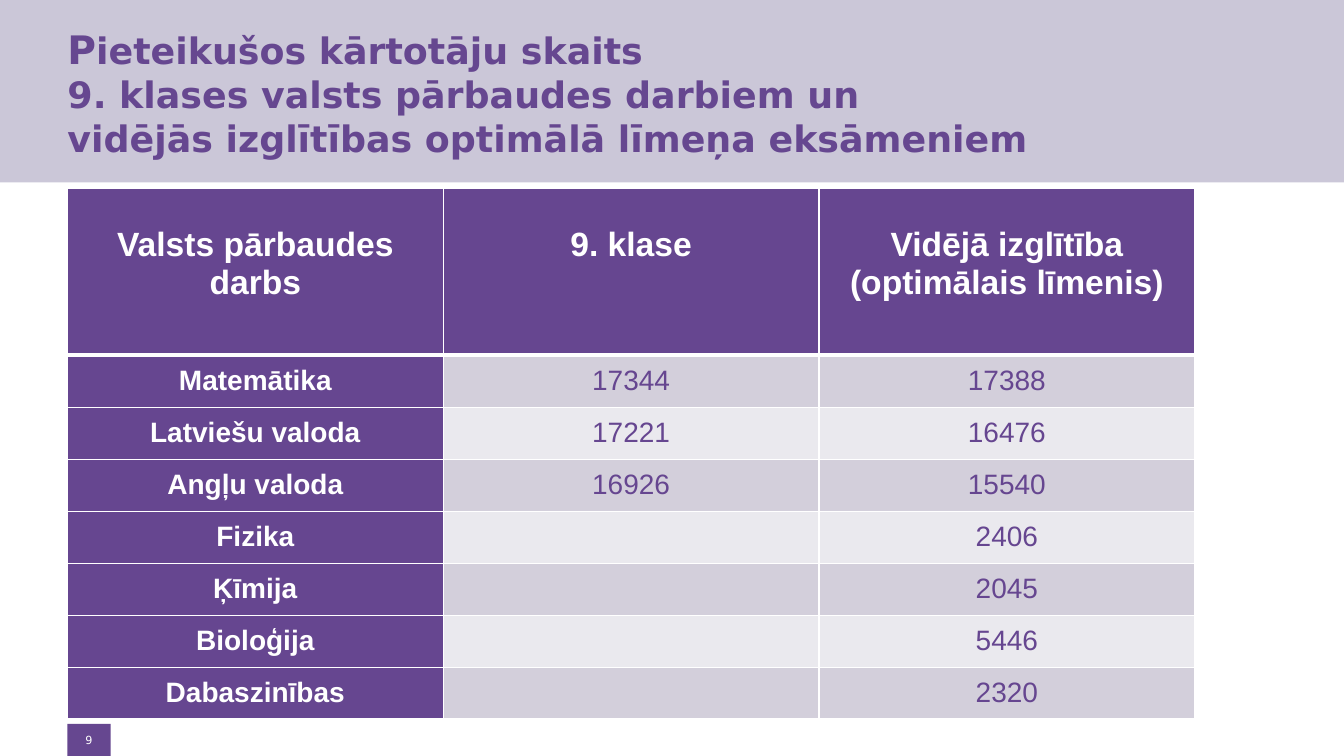
from dataclasses import dataclass

from lxml import etree
from pptx import Presentation
from pptx.dml.color import RGBColor
from pptx.enum.shapes import MSO_SHAPE
from pptx.enum.text import MSO_ANCHOR, MSO_AUTO_SIZE, PP_ALIGN
from pptx.oxml.ns import qn
from pptx.util import Cm, Pt

RECT = MSO_SHAPE.RECTANGLE
LEFT, CENTER = PP_ALIGN.LEFT, PP_ALIGN.CENTER
TOP, MIDDLE = MSO_ANCHOR.TOP, MSO_ANCHOR.MIDDLE
NO_AUTOFIT = MSO_AUTO_SIZE.NONE

PURPLE, TABLE_PURPLE, LILAC, WHITE = "664790", "664690", "CBC7D8", "FFFFFF"
BANDS = ("D3CFDB", "EAE9EE")
TITLE_FONT, TABLE_FONT = "DejaVu Sans", "Arial"
MARGIN = 1.7
COL_WIDTH, HEADER_HEIGHT, ROW_HEIGHT = 9.47, 4.19, 1.31

TITLE_LINES = (
    "Pieteikušos kārtotāju skaits",
    "9. klases valsts pārbaudes darbiem un",
    "vidējās izglītības optimālā līmeņa eksāmeniem",
)
HEADERS = ("Valsts pārbaudes darbs", "9. klase", "Vidējā izglītība (optimālais līmenis)")


@dataclass
class Exam:
    subject: str
    grade_9: str
    secondary: str


EXAMS = (
    Exam("Matemātika", "17344", "17388"),
    Exam("Latviešu valoda", "17221", "16476"),
    Exam("Angļu valoda", "16926", "15540"),
    Exam("Fizika", "", "2406"),
    Exam("Ķīmija", "", "2045"),
    Exam("Bioloģija", "", "5446"),
    Exam("Dabaszinības", "", "2320"),
)


def rgb(value: str) -> RGBColor:
    return RGBColor.from_string(value)


def add_text(p, text: str, *, size: float, color: str, font: str = TABLE_FONT,
             bold: bool = False, align=CENTER) -> None:
    p.alignment = align
    r = p.add_run()
    r.text = text
    r.font.name, r.font.size, r.font.bold = font, Pt(size), bold
    r.font.color.rgb = rgb(color)


def add_rect(slide, left: float, top: float, width: float, height: float, color: str):
    sp = slide.shapes.add_shape(RECT, Cm(left), Cm(top), Cm(width), Cm(height))
    sp.shadow.inherit = False
    sp.fill.solid()
    sp.fill.fore_color.rgb = rgb(color)
    sp.line.fill.background()
    return sp


def set_borders(cell, top: float = 1, bottom: float = 1) -> None:
    """Draw white cell edges; widths are in points."""
    tc_pr = cell._tc.get_or_add_tcPr()
    for side, width in (("L", 1), ("R", 1), ("T", top), ("B", bottom)):
        ln = etree.SubElement(tc_pr, qn(f"a:ln{side}"), w=str(Pt(width)))
        fill = etree.SubElement(ln, qn("a:solidFill"))
        etree.SubElement(fill, qn("a:srgbClr"), val=WHITE)


def fill_cell(cell, text: str, *, row: int, col: int) -> None:
    header = row == 0
    label = header or col == 0
    set_borders(cell, top=3 if row == 1 else 1, bottom=3 if header else 1)
    cell.fill.solid()
    cell.fill.fore_color.rgb = rgb(TABLE_PURPLE if label else BANDS[(row - 1) % 2])
    cell.margin_left = cell.margin_right = Cm(0.18)
    cell.margin_top, cell.margin_bottom = Cm(0.94 if header else 0), 0
    cell.vertical_anchor = TOP if header else MIDDLE
    if text:
        add_text(cell.text_frame.paragraphs[0], text, size=24 if header else 20,
                 color=WHITE if label else TABLE_PURPLE, bold=label)


def add_title(slide) -> None:
    sp = slide.shapes.title
    sp.left, sp.top, sp.width, sp.height = Cm(MARGIN), Cm(0.78), Cm(29.6), Cm(3.18)
    tf = sp.text_frame
    tf.auto_size, tf.word_wrap, tf.vertical_anchor = NO_AUTOFIT, True, MIDDLE
    tf.margin_left = 0
    p = tf.paragraphs[0]
    p.line_spacing = Pt(31.5)
    style = dict(color=PURPLE, font=TITLE_FONT, bold=True, align=LEFT)
    initial, rest = TITLE_LINES[0][0], TITLE_LINES[0][1:]
    add_text(p, initial, size=28, **style)
    add_text(p, rest, size=26, **style)
    for line in TITLE_LINES[1:]:
        p.add_line_break()
        add_text(p, line, size=26, **style)


def add_exam_table(slide) -> None:
    rows = [HEADERS] + [(e.subject, e.grade_9, e.secondary) for e in EXAMS]
    height = HEADER_HEIGHT + ROW_HEIGHT * len(EXAMS)
    table = slide.shapes.add_table(len(rows), len(HEADERS), Cm(MARGIN), Cm(4.76),
                                   Cm(COL_WIDTH * len(HEADERS)), Cm(height)).table
    for column in table.columns:
        column.width = Cm(COL_WIDTH)
    for i, values in enumerate(rows):
        table.rows[i].height = Cm(ROW_HEIGHT if i else HEADER_HEIGHT)
        for j, text in enumerate(values):
            fill_cell(table.cell(i, j), text, row=i, col=j)


def add_page_number(slide, number: str) -> None:
    tf = add_rect(slide, MARGIN, 18.24, 1.09, 0.81, PURPLE).text_frame
    tf.margin_left = tf.margin_right = tf.margin_top = tf.margin_bottom = Cm(0.1)
    tf.vertical_anchor = MIDDLE
    add_text(tf.paragraphs[0], number, size=8, color=WHITE, font=TITLE_FONT)


def main() -> None:
    prs = Presentation()
    prs.slide_width, prs.slide_height = Cm(33.87), Cm(19.05)
    slide = prs.slides.add_slide(prs.slide_layouts[5])
    band = add_rect(slide, 0, 0, 33.87, 4.6, LILAC)
    slide.shapes.title._element.addprevious(band._element)
    add_title(slide)
    add_exam_table(slide)
    add_page_number(slide, "9")
    prs.save("out.pptx")


if __name__ == "__main__":
    main()
